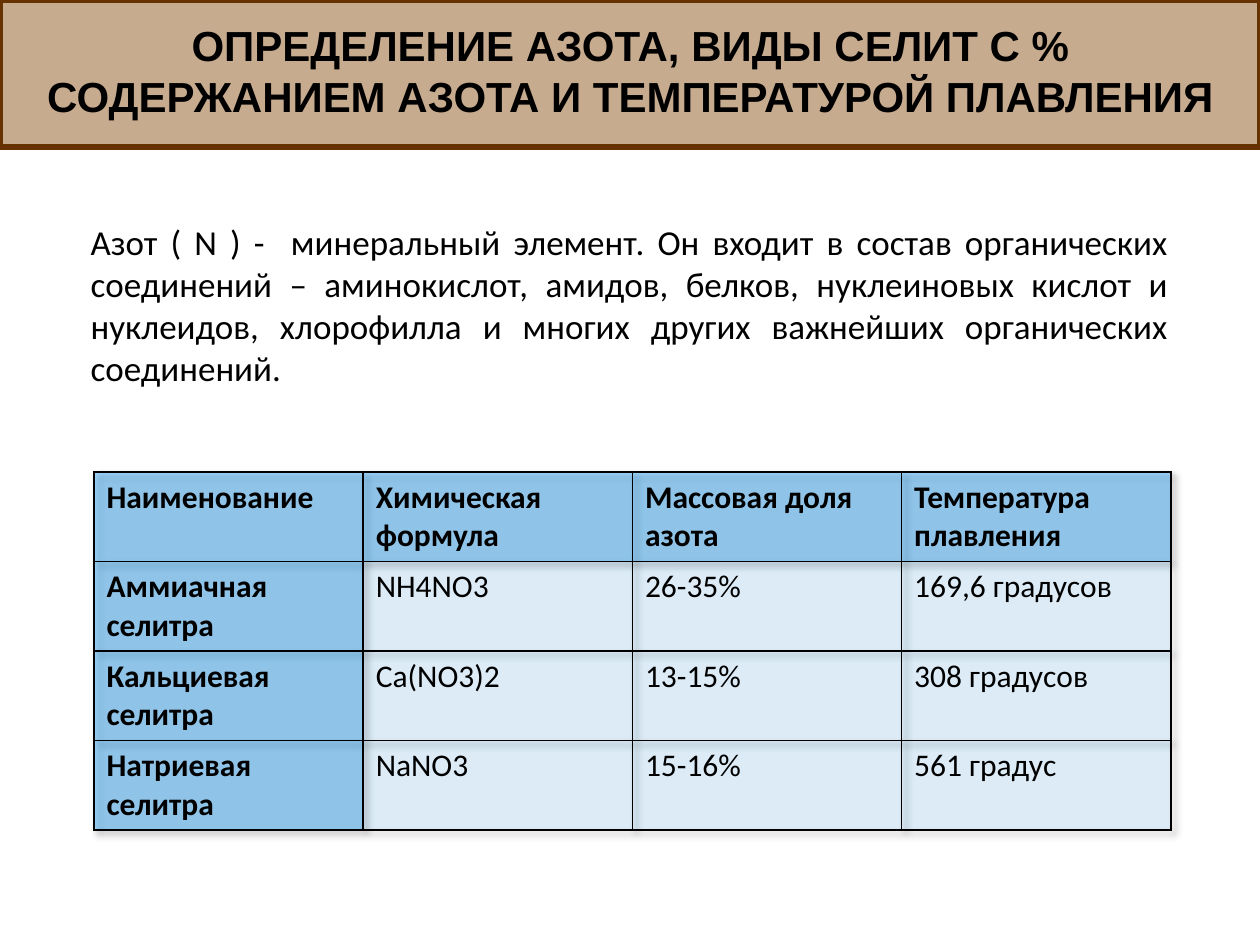
import pptx
import pptx.dml.color
import pptx.enum.shapes
import pptx.enum.text
import pptx.oxml
import pptx.oxml.ns
import pptx.util

PX = 914400 / 126
ALIGN = pptx.enum.text.PP_ALIGN
ANCHOR = pptx.enum.text.MSO_ANCHOR
NS = pptx.oxml.ns.nsdecls("a")


def emu(px):
    return pptx.util.Emu(round(px * PX))


def color(value):
    return pptx.dml.color.RGBColor.from_string(value)


class Sheet:
    ink = "000000"
    accent = "0099FF"
    band_fill = "996633"
    band_edge = "663300"
    heading_font = "Arial"
    text_font = "Calibri"

    def __init__(self, slide):
        self.slide = slide

    def fill(self, target, value, percent):
        target.fill.solid()
        target.fill.fore_color.rgb = color(value)
        tint = target.fill._xPr.find(".//" + pptx.oxml.ns.qn("a:srgbClr"))
        tint.append(pptx.oxml.parse_xml(f'<a:alpha {NS} val="{percent * 1000}"/>'))

    def set_text(self, frame, text, font, size, bold=False, align=ALIGN.LEFT):
        frame.text = text
        for paragraph in frame.paragraphs:
            paragraph.alignment = align
            for run in paragraph.runs:
                run.font.name = font
                run.font.size = pptx.util.Pt(size)
                run.font.bold = bold
                run.font.color.rgb = color(self.ink)

    def place(self, holder, left, top, width, height, anchor):
        holder.left, holder.top = emu(left), emu(top)
        holder.width, holder.height = emu(width), emu(height)
        holder.text_frame.word_wrap = True
        holder.text_frame.auto_size = pptx.enum.text.MSO_AUTO_SIZE.NONE
        holder.text_frame.vertical_anchor = anchor

    def band(self, left, top, width, height):
        band = self.slide.shapes.add_shape(
            pptx.enum.shapes.MSO_SHAPE.RECTANGLE,
            emu(left), emu(top), emu(width), emu(height))
        band.shadow.inherit = False
        self.fill(band, self.band_fill, 55)
        band.line.color.rgb = color(self.band_edge)
        band.line.width = pptx.util.Pt(3)

    def title(self, text, *box):
        heading = self.slide.shapes.title
        self.place(heading, *box, ANCHOR.MIDDLE)
        self.set_text(heading.text_frame, text, self.heading_font, 24, True, ALIGN.CENTER)
        self.slide.shapes._spTree.append(heading._element)

    def body(self, text, *box):
        intro = self.slide.placeholders[1]
        self.place(intro, *box, ANCHOR.TOP)
        self.set_text(intro.text_frame, text, self.text_font, 20, align=ALIGN.JUSTIFY)

    def border(self, cell):
        properties = cell._tc.get_or_add_tcPr()
        for index, side in enumerate(("lnL", "lnR", "lnT", "lnB")):
            properties.insert(index, pptx.oxml.parse_xml(
                f'<a:{side} {NS} w="12700"><a:solidFill>'
                f'<a:srgbClr val="{self.ink}"/></a:solidFill></a:{side}>'))

    def table(self, rows, left, top, width, height):
        table = self.slide.shapes.add_table(
            len(rows), len(rows[0]),
            emu(left), emu(top), emu(width), emu(height)).table
        table.horz_banding = False
        table._tbl.tblPr.insert(0, pptx.oxml.parse_xml(
            f'<a:effectLst {NS}><a:outerShdw blurRad="50800" dist="38100" '
            'dir="2700000" algn="tl" rotWithShape="0"><a:srgbClr val="000000">'
            '<a:alpha val="40000"/></a:srgbClr></a:outerShdw></a:effectLst>'))
        for r, values in enumerate(rows):
            for c, value in enumerate(values):
                cell = table.cell(r, c)
                header = r == 0 or c == 0
                self.set_text(cell.text_frame, value, self.text_font, 18, header)
                self.fill(cell, self.accent, 35 if header else 10)
                self.border(cell)


def main():
    deck = pptx.Presentation()
    deck.slide_width, deck.slide_height = emu(1260), emu(945)
    sheet = Sheet(deck.slides.add_slide(deck.slide_layouts[0]))
    sheet.body(
        "Азот ( N ) -  минеральный элемент. Он входит в состав органических "
        "соединений – аминокислот, амидов, белков, нуклеиновых кислот и нуклеидов, "
        "хлорофилла и многих других важнейших органических соединений.",
        78, 214, 1103, 179)
    sheet.table([
        ("Наименование", "Химическая формула", "Массовая доля азота",
         "Температура плавления"),
        ("Аммиачная селитра", "NH4NO3", "26-35%", "169,6 градусов"),
        ("Кальциевая селитра", "Ca(NO3)2", "13-15%", "308 градусов"),
        ("Натриевая селитра", "NaNO3", "15-16%", "561 градус"),
    ], 94, 472, 1077, 356)
    sheet.band(0, 0, 1260, 147)
    sheet.title(
        "ОПРЕДЕЛЕНИЕ АЗОТА, ВИДЫ СЕЛИТ С % "
        "СОДЕРЖАНИЕМ АЗОТА И ТЕМПЕРАТУРОЙ ПЛАВЛЕНИЯ",
        25, 24, 1211, 92)
    deck.save("out.pptx")


if __name__ == "__main__":
    main()
